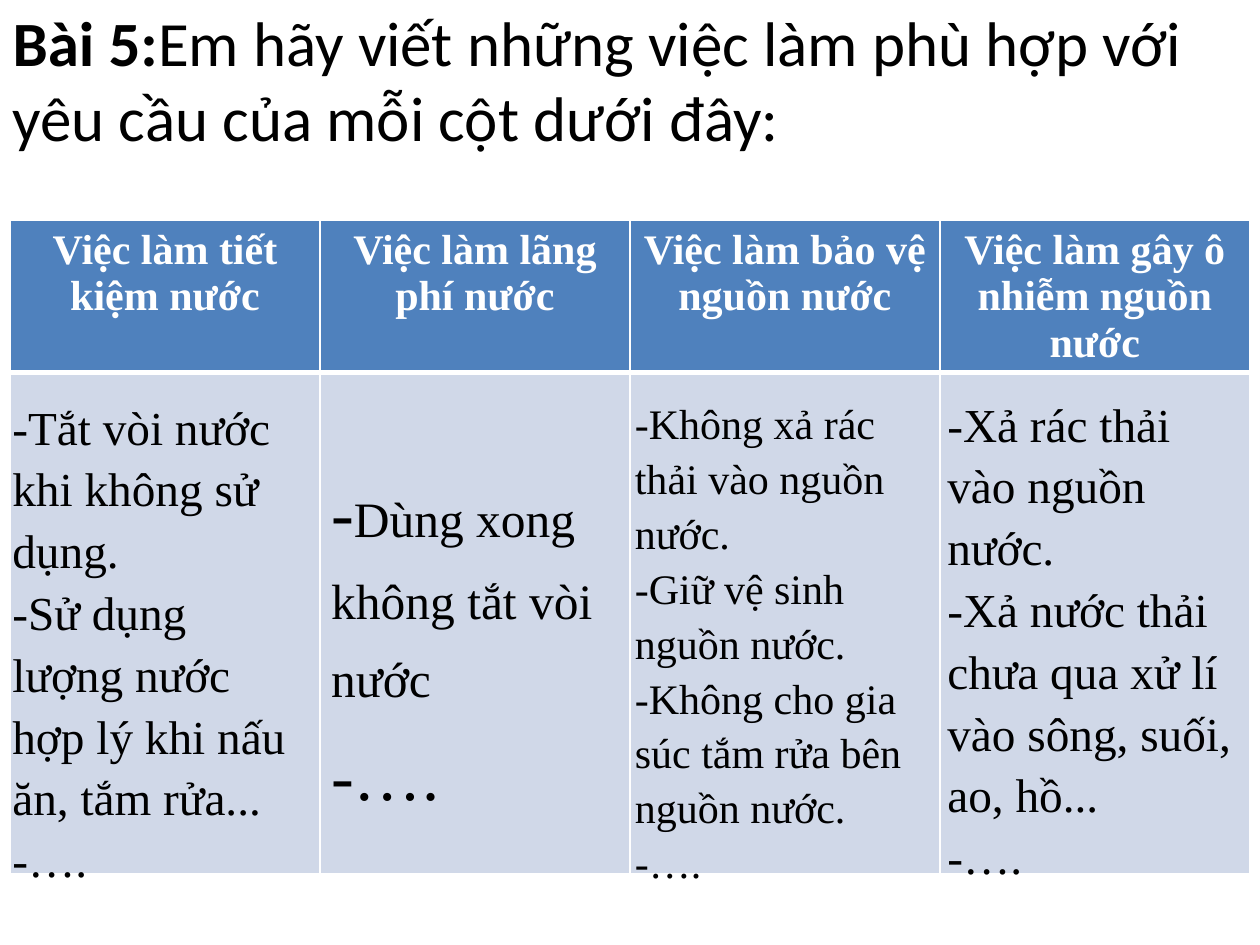
"""Build a four-column exercise slide about using and protecting water."""
import pptx
import pptx.util
import pptx.dml.color
import pptx.enum.text
import pptx.oxml
import pptx.oxml.ns
from dataclasses import dataclass

Inches, Pt = pptx.util.Inches, pptx.util.Pt
ALIGN, ANCHOR = pptx.enum.text.PP_ALIGN, pptx.enum.text.MSO_ANCHOR


@dataclass(frozen=True)
class Theme:
    """Colours, fonts and type sizes of the slide."""
    ink: str = "000000"
    white: str = "FFFFFF"
    header: str = "4F81BD"
    body: str = "D0D8E8"
    title_font: str = "Calibri"
    table_font: str = "Times New Roman"
    title_size: float = 36
    header_size: float = 24
    large: float = 27
    small: float = 24
    dash: float = 39
    phrase: float = 28.3


THEME = Theme()
WIDTH, HEIGHT = 10, 7.5
TABLE = {"left": 0.08, "top": 1.75, "column": 2.46, "rows": (1.1, 3.98)}
ANSWERS_TOP = 3.08
HEADERS = ["Việc làm tiết kiệm nước", "Việc làm lãng phí nước",
           "Việc làm bảo vệ nguồn nước", "Việc làm gây ô nhiễm nguồn nước"]
# Each answer: left, width, height, line spacing, paragraphs of (text, size) spans
ANSWERS = [
    (0, 2.53, 4, 1.09, [
        [("-Tắt vòi nước khi không sử dụng.", THEME.large)],
        [("-Sử dụng lượng nước hợp lý khi nấu ăn, tắm rửa...", THEME.large)],
        [("-….", THEME.large)]]),
    (2.53, 2.41, 3.83, 1.31, [
        [("-", THEME.dash), ("Dùng xong không tắt vòi nước", THEME.phrase)],
        [("-….", THEME.dash)]]),
    (4.94, 2.58, 4, 1.09, [
        [("-Không xả rác thải vào nguồn nước.", THEME.small)],
        [("-Giữ vệ sinh nguồn nước.", THEME.small)],
        [("-Không cho gia súc tắm rửa bên nguồn nước.", THEME.small)],
        [("-….", THEME.small)]]),
    (7.42, 2.58, 3.95, 1.09, [
        [("-Xả rác thải vào nguồn nước.", THEME.large)],
        [("-Xả nước thải chưa qua xử lí vào sông, suối, ao, hồ...", THEME.large)],
        [("-….", THEME.large)]]),
]


def apply(target, values):
    """Set each named attribute on the target."""
    for name, value in values.items():
        setattr(target, name, value)


def add_span(para, text, font, size, color, bold=False):
    """Append one formatted run to a paragraph."""
    span = para.add_run()
    span.text = text
    apply(span.font, {"name": font, "size": Pt(size), "bold": bold})
    span.font.color.rgb = pptx.dml.color.RGBColor.from_string(color)


def place(shape, left, top, width, height):
    """Move and size a shape in inches."""
    apply(shape, {"left": Inches(left), "top": Inches(top),
                  "width": Inches(width), "height": Inches(height)})


def fill_title(title):
    """Write the exercise heading into the title placeholder."""
    place(title, 0, 0, WIDTH, HEIGHT / 6)
    apply(title.text_frame, {"word_wrap": True, "vertical_anchor": ANCHOR.MIDDLE,
                             "auto_size": pptx.enum.text.MSO_AUTO_SIZE.NONE})
    para = title.text_frame.paragraphs[0]
    para.alignment = ALIGN.LEFT
    style = (THEME.title_font, THEME.title_size, THEME.ink)
    add_span(para, "Bài 5:", *style, bold=True)
    add_span(para, "Em hãy viết những việc làm phù hợp với yêu cầu của mỗi cột dưới đây:", *style)


def set_borders(cell, widths):
    """Draw white borders in the order left, right, top, bottom."""
    properties = cell._tc.get_or_add_tcPr()
    for index, (side, width) in enumerate(zip("LRTB", widths)):
        properties.insert(index, pptx.oxml.parse_xml(
            f'<a:ln{side} {pptx.oxml.ns.nsdecls("a")} w="{Pt(width)}"><a:solidFill>'
            f'<a:srgbClr val="{THEME.white}"/></a:solidFill></a:ln{side}>'))


def paint_cell(cell, color, widths):
    """Give a cell its fill and borders."""
    cell.fill.solid()
    cell.fill.fore_color.rgb = pptx.dml.color.RGBColor.from_string(color)
    set_borders(cell, widths)


def add_grid(page):
    """Add the table with its headings and empty answer cells."""
    count = len(HEADERS)
    table = page.shapes.add_table(
        2, count, Inches(TABLE["left"]), Inches(TABLE["top"]),
        Inches(TABLE["column"] * count), Inches(sum(TABLE["rows"]))).table
    for row, height in zip(table.rows, TABLE["rows"]):
        row.height = Inches(height)
    for index, text in enumerate(HEADERS):
        table.columns[index].width = Inches(TABLE["column"])
        paint_cell(table.cell(0, index), THEME.header, (1, 1, 1, 3))
        paint_cell(table.cell(1, index), THEME.body, (1, 1, 3, 1))
        para = table.cell(0, index).text_frame.paragraphs[0]
        para.alignment = ALIGN.CENTER
        add_span(para, text, THEME.table_font, THEME.header_size, THEME.white, bold=True)


def add_answer(page, left, width, height, spacing, paragraphs):
    """Add one text box of answers over a table column."""
    box = page.shapes.add_textbox(
        Inches(left), Inches(ANSWERS_TOP), Inches(width), Inches(height))
    frame = box.text_frame
    apply(frame, {"word_wrap": True, "vertical_anchor": ANCHOR.MIDDLE})
    for index, spans in enumerate(paragraphs):
        para = frame.add_paragraph() if index else frame.paragraphs[0]
        apply(para, {"alignment": ALIGN.LEFT, "line_spacing": spacing})
        for text, size in spans:
            add_span(para, text, THEME.table_font, size, THEME.ink)


def main():
    """Build and save the deck."""
    deck = pptx.Presentation()
    apply(deck, {"slide_width": Inches(WIDTH), "slide_height": Inches(HEIGHT)})
    page = deck.slides.add_slide(deck.slide_layouts.get_by_name("Title Only"))
    fill_title(page.shapes.title)
    add_grid(page)
    for answer in ANSWERS:
        add_answer(page, *answer)
    deck.save("out.pptx")


if __name__ == "__main__":
    main()
